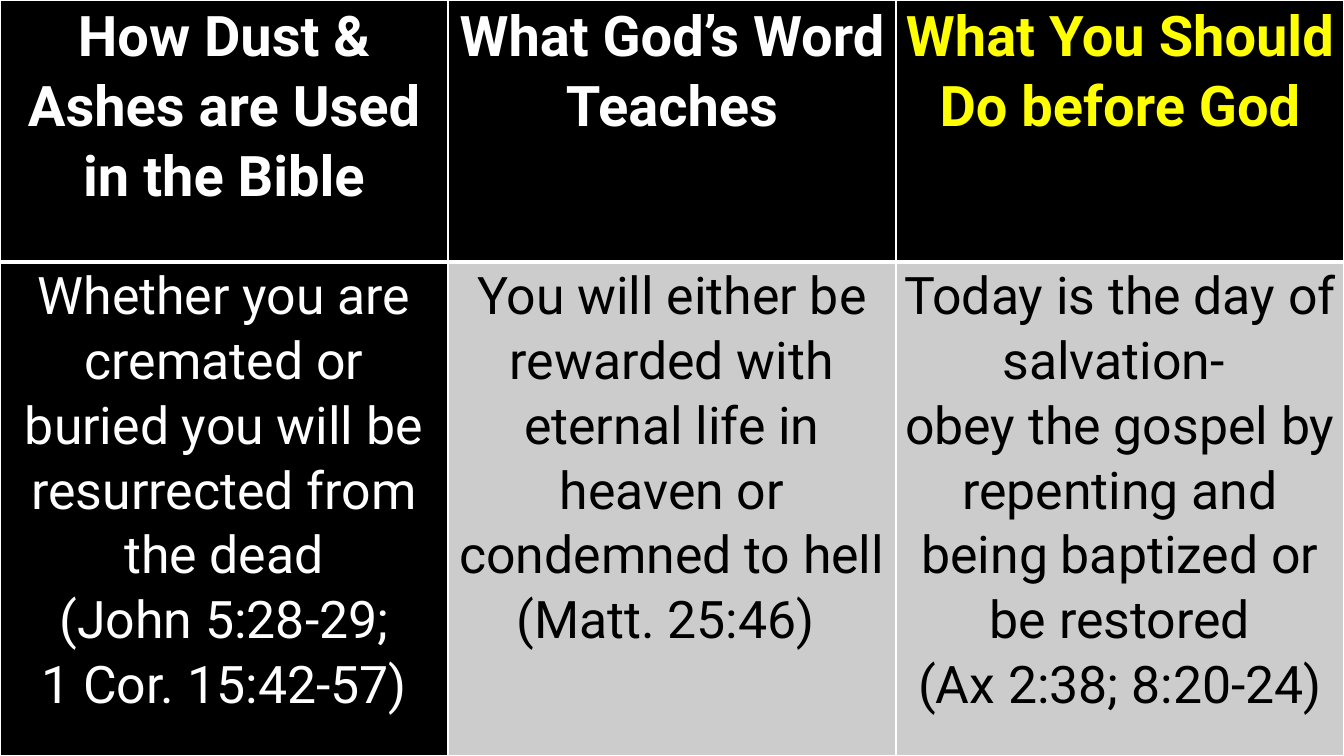
from lxml import etree
from pptx import Presentation
from pptx import util as u
from pptx.dml import color
from pptx.enum import text
from pptx.oxml import ns

WIDTH, HEIGHT = 33.87, 19.05
HEADER_HEIGHT = 6.6
BLACK, WHITE, YELLOW, GREY = "000000", "FFFFFF", "FFFF00", "CCCCCC"

HEADINGS = [
    (["How Dust & Ashes are Used in the Bible"], WHITE, BLACK),
    (["What God’s Word ", "Teaches"], WHITE, BLACK),
    (["What You Should Do before God"], YELLOW, BLACK),
]
LESSONS = [
    (["Whether you are cremated or buried you will be resurrected from the dead",
      "(John 5:28-29;", "1 Cor. 15:42-57)"], WHITE, BLACK),
    (["You will either be rewarded with eternal life in heaven or condemned to hell ",
      "(Matt. 25:46) "], BLACK, GREY),
    (["Today is the day of salvation- ",
      "obey the gospel by repenting and being baptized or be restored",
      "(Ax 2:38; 8:20-24)"], BLACK, GREY),
]


def paint(fill, value):
    fill.solid()
    fill.fore_color.rgb = color.RGBColor.from_string(value)


class SlideBuilder:
    font = "Roboto"
    line_spacing = 1.07
    side_margin = u.Cm(0.18)

    def __init__(self, deck):
        self.slide = deck.slides.add_slide(deck.slide_layouts[6])

    def background(self, value):
        paint(self.slide.background.fill, value)

    def table(self, left, top, width, heights, columns):
        frame = self.slide.shapes.add_table(
            len(heights), columns, u.Cm(left), u.Cm(top), u.Cm(width), u.Cm(sum(heights)))
        table = frame.table
        table.first_row = table.horz_banding = False
        for column in table.columns:
            column.width = u.Cm(width / columns)
        for row, height in zip(table.rows, heights):
            row.height = u.Cm(height)
        return table

    def row(self, row, contents, size, bold, bottom):
        for cell, (lines, ink, fill) in zip(row.cells, contents):
            cell.margin_left = cell.margin_right = self.side_margin
            cell.margin_top = cell.margin_bottom = 0
            paint(cell.fill, fill)
            self.borders(cell, bottom)
            self.paragraphs(cell.text_frame, lines, size, bold, ink)

    def paragraphs(self, frame, lines, size, bold, ink):
        frame.text = "\n".join(lines)
        for para in frame.paragraphs:
            para.alignment = text.PP_ALIGN.CENTER
            para.line_spacing = self.line_spacing
            para.font.name = self.font
            para.font.size = u.Pt(size)
            para.font.bold = bold
            paint(para.font.fill, ink)

    def borders(self, cell, bottom):
        properties = cell._tc.get_or_add_tcPr()
        for index, (side, points) in enumerate([("L", 1), ("R", 1), ("T", 1), ("B", bottom)]):
            line = etree.Element(ns.qn(f"a:ln{side}"), w=str(u.Pt(points)))
            solid = etree.SubElement(line, ns.qn("a:solidFill"))
            etree.SubElement(solid, ns.qn("a:srgbClr"), val=WHITE)
            properties.insert(index, line)


def main():
    deck = Presentation()
    deck.slide_width, deck.slide_height = u.Cm(WIDTH), u.Cm(HEIGHT)
    builder = SlideBuilder(deck)
    builder.background(BLACK)
    table = builder.table(0, 0, WIDTH, [HEADER_HEIGHT, HEIGHT - HEADER_HEIGHT], len(HEADINGS))
    builder.row(table.rows[0], HEADINGS, size=40, bold=True, bottom=3)
    builder.row(table.rows[1], LESSONS, size=37, bold=False, bottom=1)
    deck.save("out.pptx")


if __name__ == "__main__":
    main()
